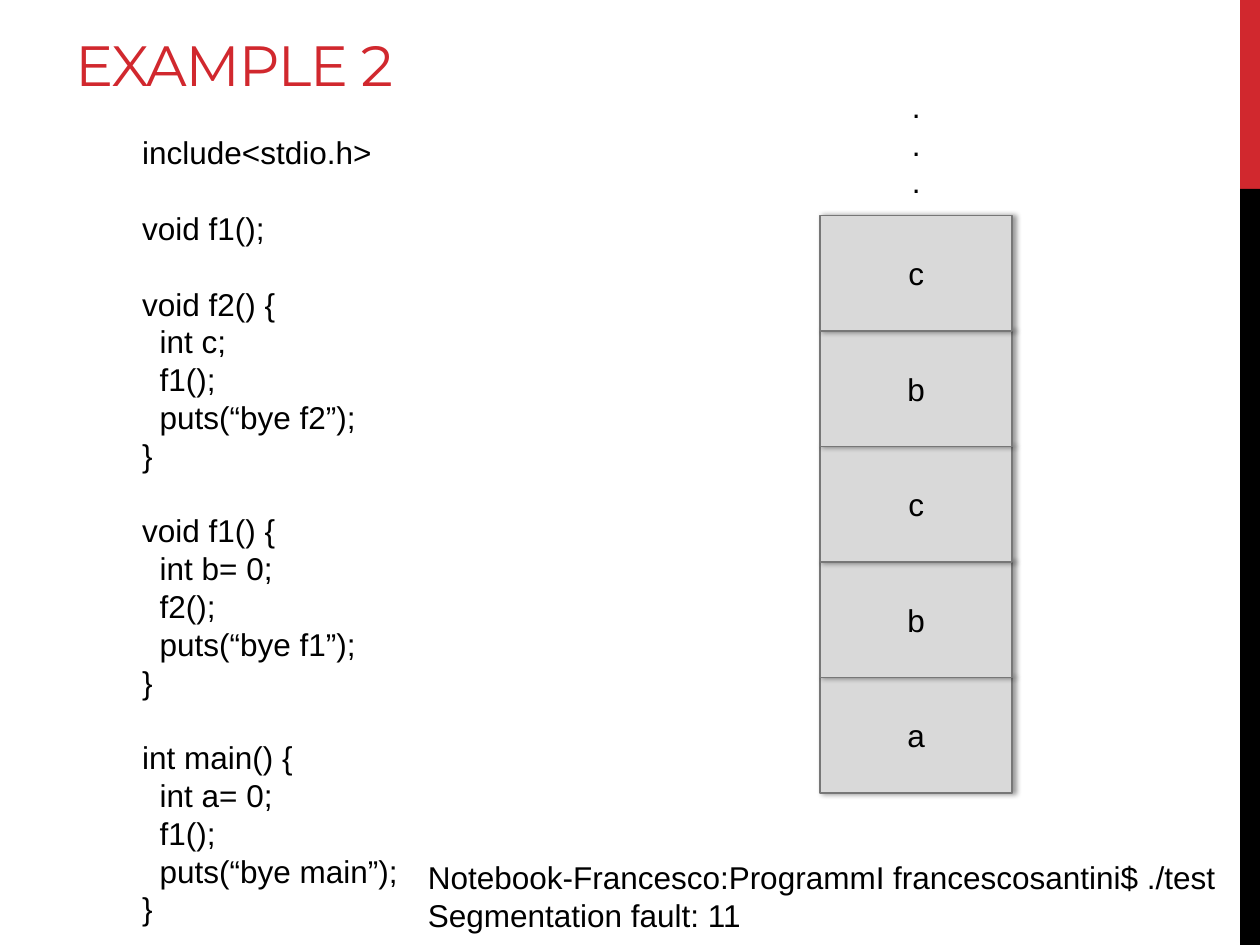
from lxml import etree
from pptx import Presentation
from pptx import util as u
from pptx.dml.color import RGBColor
from pptx.enum import shapes, text
from pptx.oxml import ns

Pt = u.Pt

# Content
TITLE = "EXAMPLE 2"
CODE_BLOCKS = [
    ["include<stdio.h>"],
    ["void f1();"],
    ["void f2() {", "  int c;", "  f1();", "  puts(“bye f2”);", "}"],
    ["void f1() {", "  int b= 0;", "  f2();", "  puts(“bye f1”);", "}"],
    ["int main() {", "  int a= 0;", "  f1();", "  puts(“bye main”);", "}"],
]
STACK_FROM_BOTTOM = ["a", "b", "c", "b", "c"]
MORE_FRAMES = [[".", ".", "."]]
TERMINAL = [["Notebook-Francesco:ProgrammI francescosantini$ ./test",
             "Segmentation fault: 11"]]

# Style
RED = RGBColor(0xD1, 0x28, 0x2E)
BLACK = RGBColor(0, 0, 0)
FRAME_FILL = RGBColor(0xD9, 0xD9, 0xD9)
FRAME_LINE = RGBColor(0x77, 0x77, 0x77)
BODY_FONT, BODY_SIZE, LINE_HEIGHT = "Arial", 18, 21.6

# Layout, in points
SLIDE_W, SLIDE_H = 720, 540
BAND_X, BAND_SPLIT = 708.7, 108
STACK_X, STACK_BOTTOM, FRAME_W, FRAME_H = 468.6, 453.2, 109.9, 66


def style(paragraph, name=BODY_FONT, size=BODY_SIZE, color=BLACK):
    for run in paragraph.runs:
        run.font.name, run.font.size = name, Pt(size)
        run.font.color.rgb = color


def add_rect(slide, x, y, w, h, fill):
    rect = slide.shapes.add_shape(shapes.MSO_SHAPE.RECTANGLE, Pt(x), Pt(y), Pt(w), Pt(h))
    rect.shadow.inherit = False
    rect.fill.solid()
    rect.fill.fore_color.rgb = fill
    rect.line.fill.background()
    return rect


def add_lines(slide, blocks, x, y, w, h):
    """Write blocks of lines, with one empty line's height between blocks."""
    frame = slide.shapes.add_textbox(Pt(x), Pt(y), Pt(w), Pt(h)).text_frame
    frame.word_wrap = True
    frame.text = "\n".join(line for block in blocks for line in block)
    paragraphs = iter(frame.paragraphs)
    for b, block in enumerate(blocks):
        for i in range(len(block)):
            paragraph = next(paragraphs)
            paragraph.line_spacing = Pt(LINE_HEIGHT)
            if b and i == 0:
                paragraph.space_before = Pt(LINE_HEIGHT)
            style(paragraph)


def add_shadow(shape):
    effects = shape._element.spPr.find(ns.qn("a:effectLst"))
    shadow = etree.SubElement(effects, ns.qn("a:outerShdw"), blurRad=str(Pt(3.1)),
                              dist=str(Pt(1.8)), dir="0", rotWithShape="0")
    color = etree.SubElement(shadow, ns.qn("a:srgbClr"), val="000000")
    etree.SubElement(color, ns.qn("a:alpha"), val="40000")


def main():
    deck = Presentation()
    deck.slide_width, deck.slide_height = Pt(SLIDE_W), Pt(SLIDE_H)
    slide = deck.slides.add_slide(deck.slide_layouts[6])

    # Side band
    band_w = SLIDE_W - BAND_X
    add_rect(slide, BAND_X, 0, band_w, BAND_SPLIT, RED)
    add_rect(slide, BAND_X, BAND_SPLIT, band_w, SLIDE_H - BAND_SPLIT, BLACK)

    # Title
    title = slide.shapes.add_textbox(Pt(36), Pt(12.2), Pt(649.4), Pt(47.5)).text_frame
    title.word_wrap = True
    title.vertical_anchor = text.MSO_ANCHOR.BOTTOM
    title.text = TITLE
    heading = title.paragraphs[0]
    style(heading, "Montserrat", 32.4, RED)
    heading.runs[0].font._element.set("spc", "-60")

    # Program
    add_lines(slide, CODE_BLOCKS, 74.2, 72.7, 164, 465)

    # Call stack, growing upwards
    for level, variable in enumerate(STACK_FROM_BOTTOM, start=1):
        frame = add_rect(slide, STACK_X, STACK_BOTTOM - level * FRAME_H,
                         FRAME_W, FRAME_H, FRAME_FILL)
        frame.line.color.rgb = FRAME_LINE
        frame.line.width = Pt(1)
        add_shadow(frame)
        frame.text_frame.text = variable
        frame.text_frame.vertical_anchor = text.MSO_ANCHOR.MIDDLE
        label = frame.text_frame.paragraphs[0]
        label.alignment = text.PP_ALIGN.CENTER
        style(label)
    add_lines(slide, MORE_FRAMES, 514, 46.1, 19.4, 72.7)

    # Terminal output
    add_lines(slide, TERMINAL, 237.4, 486.9, 482.6, 51)

    deck.save("out.pptx")


if __name__ == "__main__":
    main()
